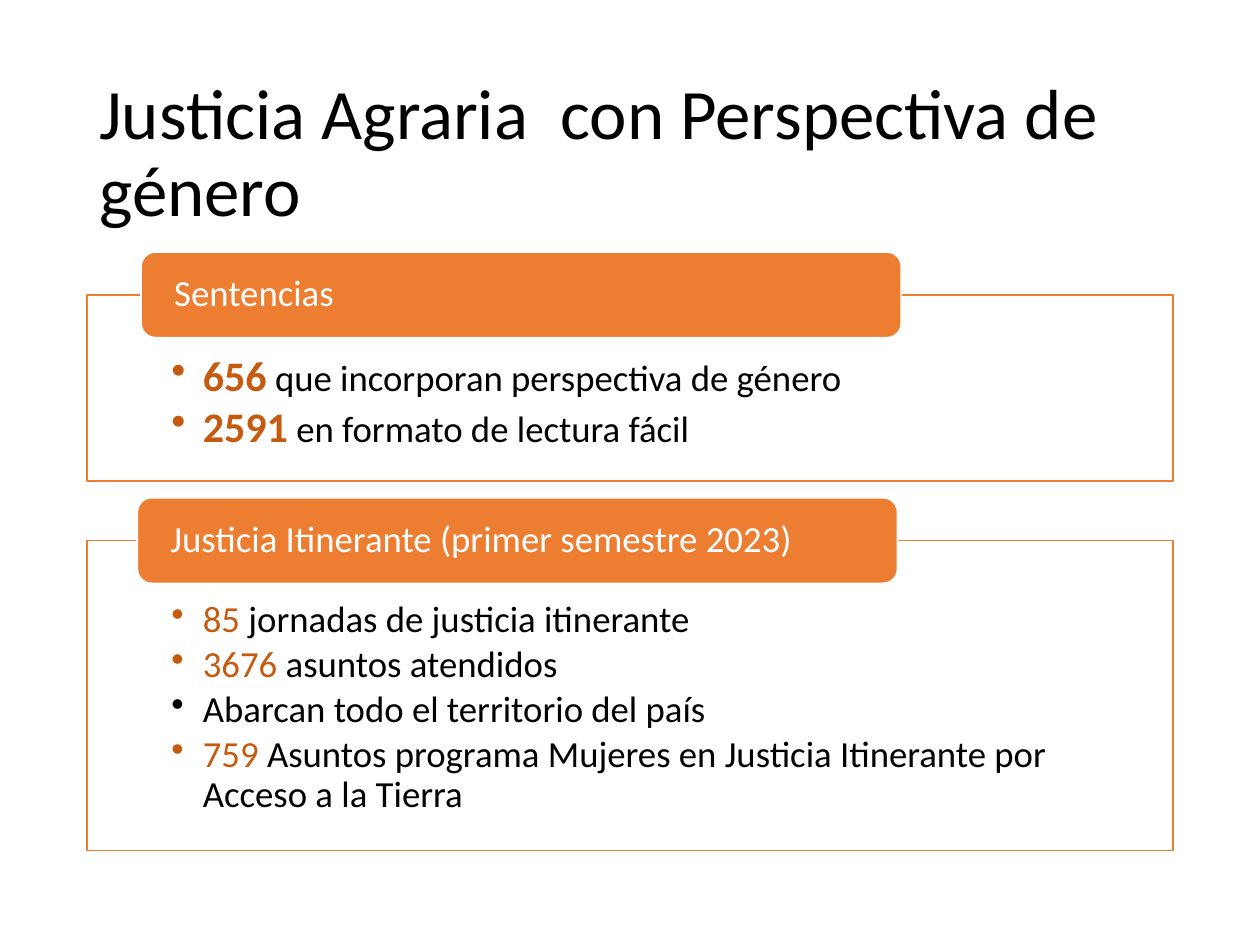
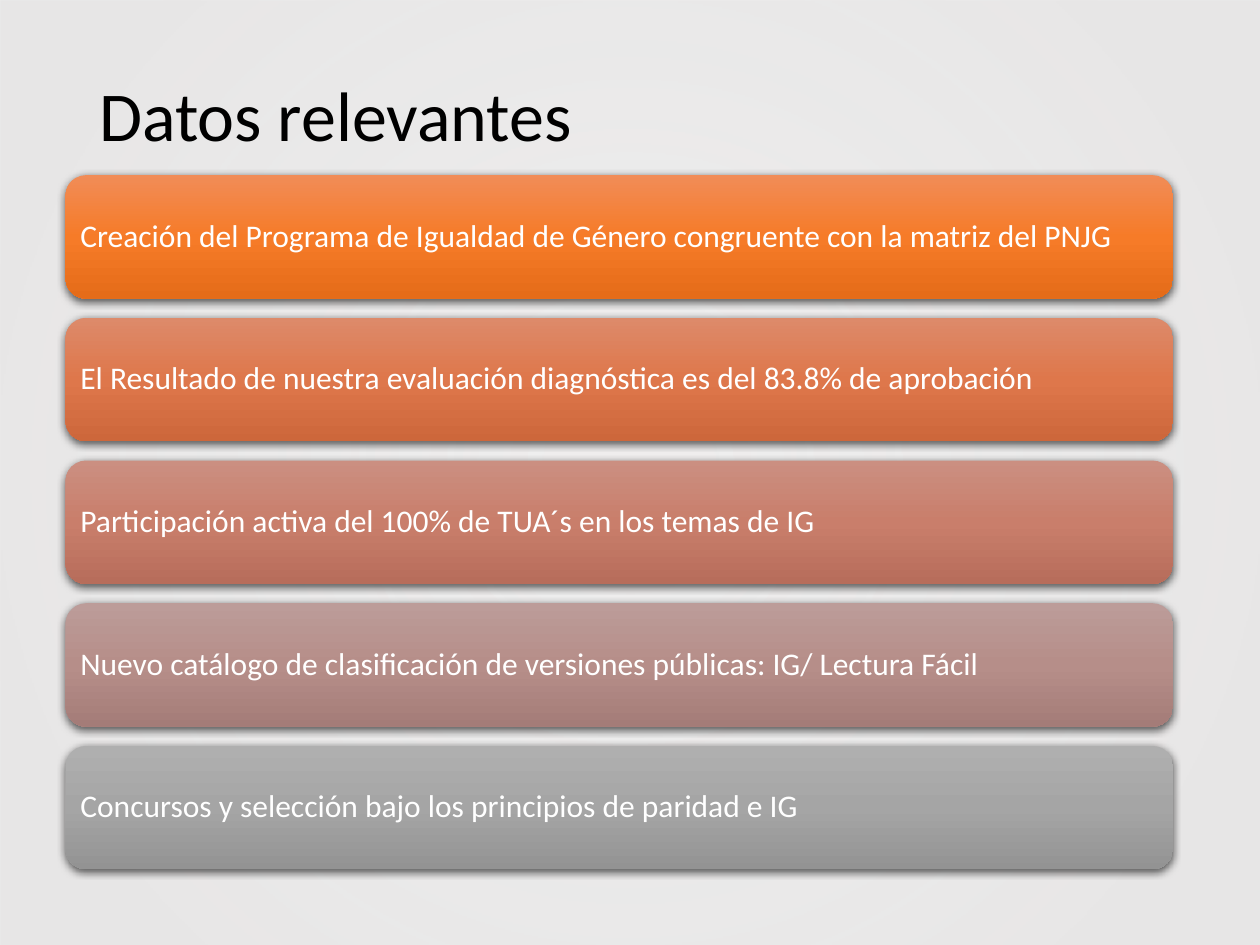
from lxml import etree
from pptx import Presentation
from pptx import util as u
from pptx.dml import color
from pptx.enum import shapes, text
from pptx.oxml import ns

# Grid: 100 columns by 75 rows on a 10 by 7.5 inch slide
COLS, ROWS = 100, 75
WIDE, HIGH = u.Inches(10), u.Inches(7.5)
EDGE, SPAN = 6.9, 86.2

HUES = {
    "ink": "000000", "paper": "FFFFFF", "main": "ED7D31",
    "deep": "C55A11", "mist": "E7E6E6",
}
FONT = "Calibri"
DRAW = "http://schemas.openxmlformats.org/drawingml/2006/main"
ANCHOR = text.MSO_ANCHOR
KIND = shapes.MSO_SHAPE

# Each run is (words, size, hue, bold)
PANELS = [
    {"top": 23.4, "tall": 14.8, "shift": 4.3, "foot": 1.9,
     "head": "Sentencias",
     "items": [
         [("656", 24, "deep", True),
          (" que incorporan perspectiva de género", 21, "ink", False)],
         [("2591", 24, "deep", True),
          (" en formato de lectura fácil", 21, "ink", False)],
     ]},
    {"top": 42.9, "tall": 24.6, "shift": 4, "foot": 1.6,
     "head": "Justicia Itinerante (primer semestre 2023)",
     "items": [
         [("85", 21, "deep", False),
          (" jornadas de justicia itinerante", 21, "ink", False)],
         [("3676", 21, "deep", False),
          (" asuntos atendidos", 21, "ink", False)],
         [("Abarcan todo el territorio del país", 21, "ink", False)],
         [("759", 21, "deep", False),
          (" Asuntos programa Mujeres en Justicia Itinerante por Acceso a la Tierra",
           21, "ink", False)],
     ]},
]

BARS = [
    ("Creación del Programa de Igualdad de Género congruente con la matriz del PNJG",
     ("F18C57", "F67B28", "E56C19")),
    ("El Resultado de nuestra evaluación diagnóstica es del 83.8% de aprobación",
     ("DD8A6A", "DE774B", "CD673B")),
    ("Participación activa del 100% de TUA´s en los temas de IG",
     ("CB8F81", "C97E6B", "B76D5B")),
    ("Nuevo catálogo de clasificación de versiones públicas: IG/ Lectura Fácil",
     ("BC9C99", "B68E89", "A47C78")),
    ("Concursos y selección bajo los principios de paridad e IG",
     ("AFAFAF", "A5A5A5", "939393")),
]


def across(n):
    return round(WIDE * n / COLS)


def down(n):
    return round(HIGH * n / ROWS)


def place(box):
    x, y, w, h = box
    return across(x), down(y), across(w), down(h)


def assign(item, values):
    for name, value in values.items():
        setattr(item, name, value)


def node(xml):
    """Parse a fragment, with the drawing namespace put on its root."""
    tag, rest = xml[1:].split(">", 1)
    slash = "/" if tag.endswith("/") else ""
    return etree.fromstring(
        f'<{tag.rstrip("/")} xmlns:a="{DRAW}"{slash}>{rest}')


def tint(hue, alpha=100):
    return f'<a:srgbClr val="{hue}"><a:alpha val="{alpha * 1000}"/></a:srgbClr>'


def blend(stops, way):
    """Gradient fill from (position, hue, alpha) stops."""
    marks = "".join(f'<a:gs pos="{at * 1000}">{tint(hue, alpha)}</a:gs>'
                    for at, hue, alpha in stops)
    return f"<a:gradFill><a:gsLst>{marks}</a:gsLst>{way}</a:gradFill>"


def shape(slide, kind, box, fill, line=None):
    item = slide.shapes.add_shape(kind, *place(box))
    item.shadow.inherit = False
    item._element.spPr.insert(2, node(fill))
    if line:
        item.line.color.rgb = color.RGBColor.from_string(HUES[line])
        item.line.width = u.Pt(1)
    else:
        item.line.fill.background()
    return item


def write(item, paras, insets, anchor=ANCHOR.MIDDLE, after=0, bullet=False):
    frame = item.text_frame
    left, top, right, base = insets
    assign(frame, {
        "word_wrap": True, "vertical_anchor": anchor,
        "margin_left": across(left), "margin_right": across(right),
        "margin_top": down(top), "margin_bottom": down(base),
    })
    for i, runs in enumerate(paras):
        para = frame.add_paragraph() if i else frame.paragraphs[0]
        assign(para, {"alignment": text.PP_ALIGN.LEFT, "line_spacing": 0.9,
                      "space_after": u.Pt(after)})
        if bullet:
            props = para._p.get_or_add_pPr()
            props.set("marL", str(across(2.5)))
            props.set("indent", str(-across(2.5)))
            props.append(node('<a:buChar char="•"/>'))
        for words, size, hue, bold in runs:
            run = para.add_run()
            run.text = words
            assign(run.font, {"name": FONT, "size": u.Pt(size), "bold": bold})
            run.font.color.rgb = color.RGBColor.from_string(HUES[hue])


def title(slide, words, box, size):
    item = slide.shapes.add_textbox(*place(box))
    write(item, [[(words, size, "ink", False)]], (1, 0.5, 1, 0.5))


def panel(slide, box, data):
    """Framed list with a header tab across its top edge."""
    x, y, w, _ = box
    paper = f'<a:solidFill>{tint(HUES["paper"], 90)}</a:solidFill>'
    frame = shape(slide, KIND.RECTANGLE, box, paper, "main")
    write(frame, data["items"], (6.7, 4.8, 6.7, data["foot"]),
          ANCHOR.TOP, 3, True)
    tab = shape(slide, KIND.ROUNDED_RECTANGLE,
                (x + data["shift"], y - 3.4, w * 0.7, 6.8),
                f'<a:solidFill>{tint(HUES["main"])}</a:solidFill>', "paper")
    write(tab, [[(data["head"], 21, "paper", False)]], (2.3, 0, 2.3, 0))


def stack(slide, box):
    """Equal bars with even gaps, filling the box from top to bottom."""
    x, y, w, h = box
    tall = 9.8
    step = (h - tall) / (len(BARS) - 1)
    for i, (words, hues) in enumerate(BARS):
        stops = [(at, hue, 100) for at, hue in zip((0, 50, 100), hues)]
        bar = shape(slide, KIND.ROUNDED_RECTANGLE, (x, y + i * step, w, tall),
                    blend(stops, '<a:lin ang="5400000" scaled="0"/>'))
        glow = (f'<a:outerShdw blurRad="{u.Pt(4.5)}" dist="{u.Pt(1.5)}" '
                f'dir="5400000" algn="ctr" rotWithShape="0">'
                f'{tint(HUES["ink"], 63)}</a:outerShdw>')
        bar._element.spPr.find(ns.qn("a:effectLst")).append(node(glow))
        write(bar, [[(words, 18, "paper", False)]], (0.7,) * 4)


def justice(slide):
    title(slide, "Justicia Agraria  con Perspectiva de género",
          (EDGE, 6.1, SPAN, 12.4), 40.5)
    for data in PANELS:
        panel(slide, (EDGE, data["top"], SPAN, data["tall"]), data)


def facts(slide):
    # Soft radial backdrop
    mist = HUES["mist"]
    way = ('<a:path path="circle">'
           '<a:fillToRect l="50000" t="50000" r="50000" b="50000"/></a:path>')
    shape(slide, KIND.RECTANGLE, (0, 0, COLS, ROWS),
          blend([(10, mist, 68), (85, mist, 97)], way))
    title(slide, "Datos relevantes", (EDGE, 2.2, SPAN, 14.5), 40)
    stack(slide, (5.2, 13.9, 87.9, 55.1))


def main():
    deck = Presentation()
    assign(deck, {"slide_width": WIDE, "slide_height": HIGH})
    for build in (justice, facts):
        build(deck.slides.add_slide(deck.slide_layouts[6]))
    deck.save("out.pptx")


if __name__ == "__main__":
    main()
